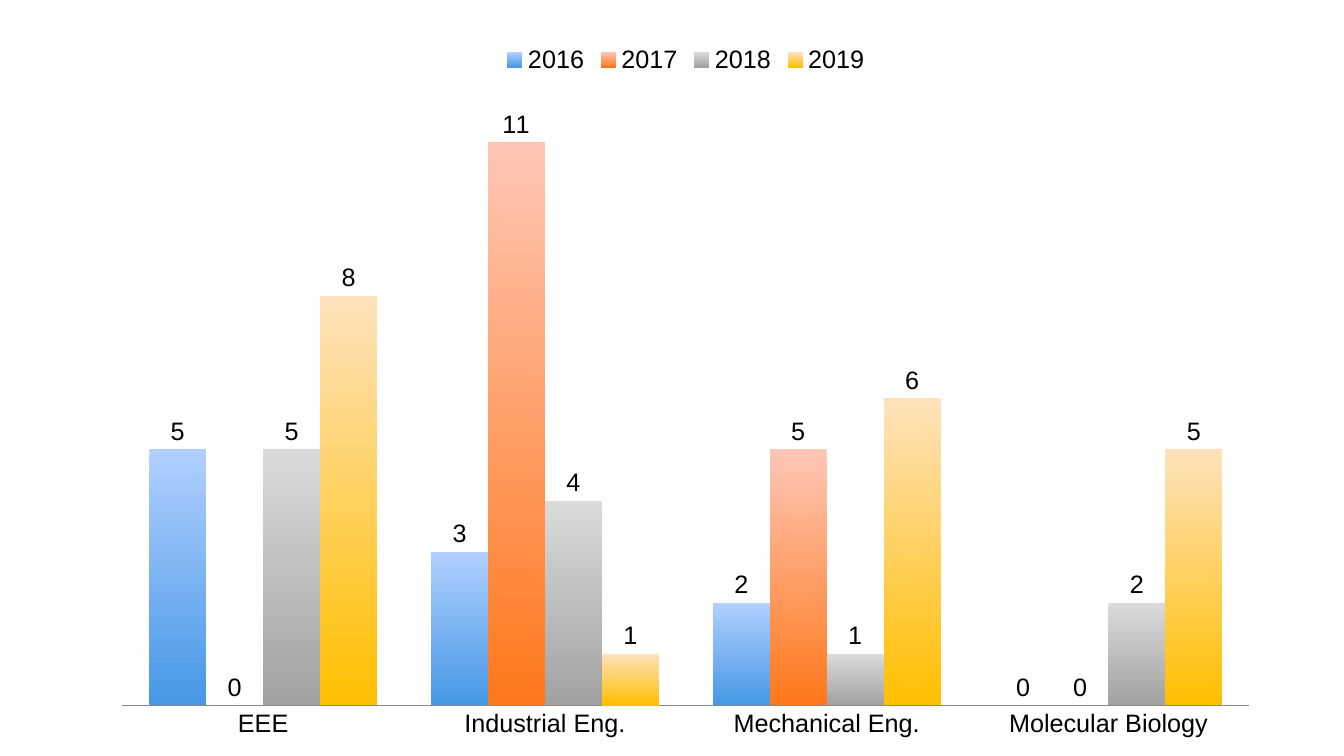
"""Build a slide with a column chart of counts per department and year."""
import pptx
import pptx.chart.data
import pptx.dml.color
import pptx.enum.chart
import pptx.oxml
import pptx.util
from pptx.oxml.ns import nsdecls, qn

Cm, Pt = pptx.util.Cm, pptx.util.Pt
RGB = pptx.dml.color.RGBColor
enum = pptx.enum.chart

DEPTS = ["EEE", "Industrial Eng.", "Mechanical Eng.", "Molecular Biology"]
YEARS = [
    ("2016", (5, 3, 2, 0), RGB(0xB1, 0xCF, 0xFF), RGB(0x46, 0x98, 0xE5)),
    ("2017", (0, 11, 5, 0), RGB(0xFF, 0xC6, 0xB5), RGB(0xFF, 0x78, 0x1B)),
    ("2018", (5, 4, 1, 2), RGB(0xDA, 0xDA, 0xDA), RGB(0xA2, 0xA2, 0xA2)),
    ("2019", (8, 1, 6, 5), RGB(0xFF, 0xE2, 0xBC), RGB(0xFF, 0xBF, 0x00)),
]
BLACK = RGB(0, 0, 0)
GREY = RGB(0x89, 0x89, 0x89)
FRAME = (Cm(2.49), Cm(0.84), Cm(29.59), Cm(18.21))
PLOT = {"x": 0.02, "y": 0.08, "w": 0.96, "h": 0.85}


def style(text, size=18, name="Arial", color=BLACK):
    text.font.size = Pt(size)
    text.font.name = name
    text.font.color.rgb = color


def place(chart):
    area = chart.element.find(".//" + qn("c:plotArea"))
    for old in area.findall(qn("c:layout")):
        area.remove(old)
    modes = "".join(f'<c:{k}Mode val="edge"/>' for k in "xy")
    sides = "".join(f'<c:{k} val="{v}"/>' for k, v in PLOT.items())
    area.insert(0, pptx.oxml.parse_xml(
        f'<c:layout {nsdecls("c")}><c:manualLayout>'
        f'<c:layoutTarget val="inner"/>{modes}{sides}'
        '</c:manualLayout></c:layout>'))


def paint(bar, top, base):
    bar.invert_if_negative = False
    fill = bar.format.fill
    fill.gradient()
    fill.gradient_angle = 270
    for stop, color in zip(fill.gradient_stops, (top, base)):
        stop.color.rgb = color
    tags = bar.data_labels
    tags.show_value = True
    tags.position = enum.XL_LABEL_POSITION.OUTSIDE_END
    style(tags)


def main():
    deck = pptx.Presentation()
    deck.slide_width, deck.slide_height = Cm(33.87), Cm(19.05)
    slide = deck.slides.add_slide(deck.slide_layouts[6])
    data = pptx.chart.data.CategoryChartData()
    data.categories = DEPTS
    for year, counts, *_ in YEARS:
        data.add_series(year, counts)
    kind = enum.XL_CHART_TYPE.COLUMN_CLUSTERED
    chart = slide.shapes.add_chart(kind, *FRAME, data).chart
    style(chart)
    chart.has_title = False
    chart.has_legend = True
    chart.legend.position = enum.XL_LEGEND_POSITION.TOP
    chart.legend.include_in_layout = False
    style(chart.legend)

    plot = chart.plots[0]
    plot.gap_width, plot.overlap = 95, 0
    plot.vary_by_categories = False
    for bar, (_, _, top, base) in zip(plot.series, YEARS):
        paint(bar, top, base)

    floor = chart.category_axis
    floor.major_tick_mark = enum.XL_TICK_MARK.NONE
    floor.format.line.color.rgb = GREY
    floor.format.line.width = Pt(0.75)
    style(floor.tick_labels)
    scale = chart.value_axis
    scale.minimum_scale, scale.maximum_scale = 0, 12
    scale.has_major_gridlines = False
    scale.visible = False
    place(chart)
    deck.save("out.pptx")


if __name__ == "__main__":
    main()
